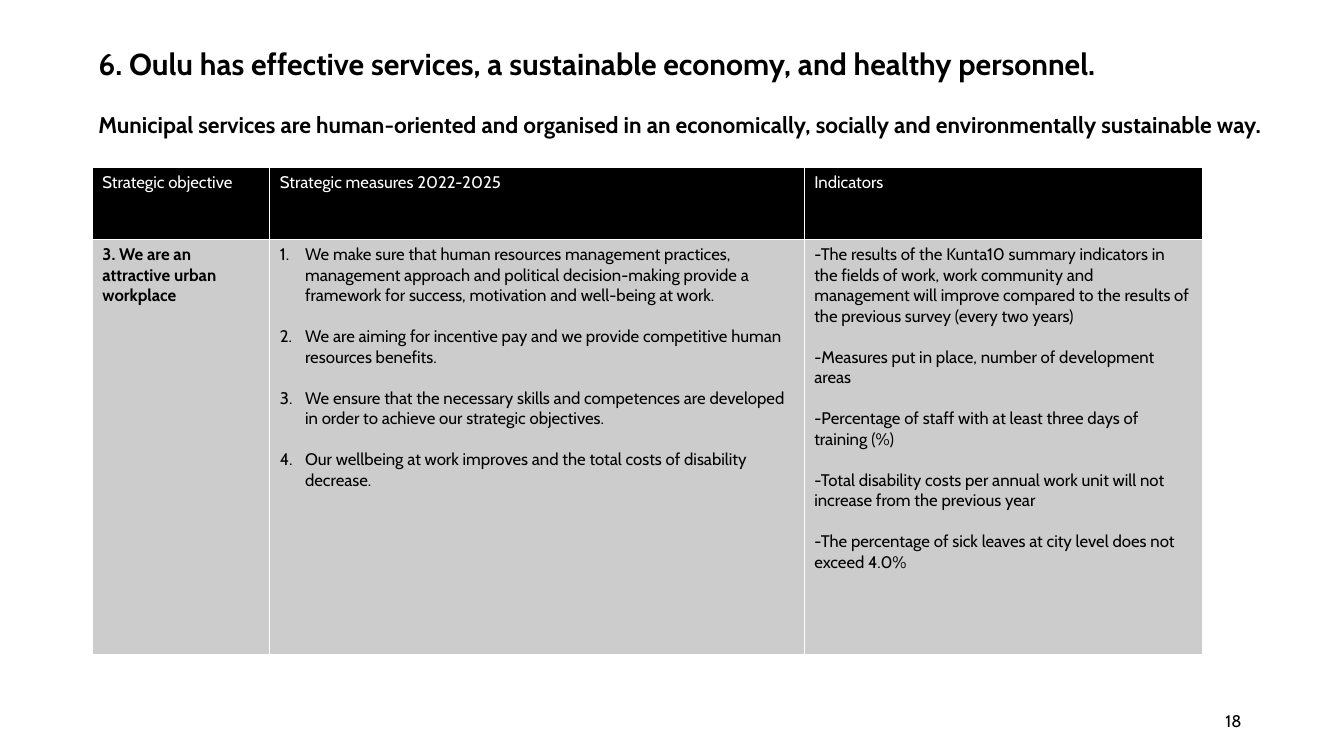
from lxml import etree
from pptx import Presentation
from pptx import util as u
from pptx.dml.color import RGBColor
from pptx.enum import text as t
from pptx.oxml import ns

PX = 9525  # EMU per px, 96 px to the inch
FONT = "Cabin"
BLACK = RGBColor(0, 0, 0)
WHITE = RGBColor(255, 255, 255)
GREY = RGBColor(0xCC, 0xCC, 0xCC)
LINE_GAP = 14.6  # one line of table text, in points

COLUMN_WIDTHS = [169, 509, 379]
ROW_HEIGHTS = [69, 395]
HEADERS = ["Strategic objective", "Strategic measures 2022-2025", "Indicators"]
OBJECTIVE = "3. We are an attractive urban workplace"
MEASURES = [
    "We make sure that human resources management practices, management approach and "
    "political decision-making provide a framework for success, motivation and "
    "well-being at work.",
    "We are aiming for incentive pay and we provide competitive human resources benefits.",
    "We ensure that the necessary skills and competences are developed in order to "
    "achieve our strategic objectives.",
    "Our wellbeing at work improves and the total costs of disability decrease.",
]
INDICATORS = [
    "-The results of the Kunta10 summary indicators in the fields of work, work community "
    "and management will improve compared to the results of the previous survey "
    "(every two years)",
    "-Measures put in place, number of development areas",
    "-Percentage of staff with at least three days of training (%)",
    "-Total disability costs per annual work unit will not increase from the previous year",
    "-The percentage of sick leaves at city level does not exceed 4.0%",
]


def px(*lengths):
    return [u.Emu(length * PX) for length in lengths]


def write(frame, content, size=12, color=BLACK, bold=False, align=t.PP_ALIGN.LEFT,
          gap=0, spacing=None, numbered=False, append=False):
    """Write one paragraph per text, with a gap between paragraphs."""
    for index, line in enumerate(content):
        first = index == 0 and not append
        paragraph = frame.paragraphs[0] if first else frame.add_paragraph()
        if numbered:
            properties = paragraph._p.get_or_add_pPr()
            properties.set("marL", str(24 * PX))
            properties.set("indent", str(-24 * PX))
            etree.SubElement(properties, ns.qn("a:buAutoNum"), type="arabicPeriod")
        paragraph.alignment = align
        paragraph.space_before = u.Pt(0 if first else gap)
        if spacing:
            paragraph.line_spacing = spacing
        run = paragraph.add_run()
        run.text = line
        run.font.name = FONT
        run.font.size = u.Pt(size)
        run.font.bold = bold
        run.font.color.rgb = color


def format_cell(cell, fill):
    properties = cell._tc.get_or_add_tcPr()
    for side in ("lnL", "lnR", "lnT", "lnB"):
        line = etree.SubElement(properties, ns.qn("a:" + side), w=str(u.Pt(1)))
        solid = etree.SubElement(line, ns.qn("a:solidFill"))
        etree.SubElement(solid, ns.qn("a:srgbClr"), val=str(WHITE))
    cell.fill.solid()
    cell.fill.fore_color.rgb = fill


def add_heading(slide, left, top, width, height):
    title = slide.shapes.title
    title.left, title.top, title.width, title.height = px(left, top, width, height)
    frame = title.text_frame
    frame.word_wrap = True
    frame.auto_size = t.MSO_AUTO_SIZE.NONE
    frame.vertical_anchor = t.MSO_ANCHOR.MIDDLE
    write(frame, ["6. Oulu has effective services, a sustainable economy, and healthy personnel."],
          size=21.6, bold=True, spacing=0.9)
    write(frame, ["Municipal services are human-oriented and organised in an economically, "
                  "socially and environmentally sustainable way."],
          size=16.2, bold=True, spacing=0.9, gap=23, append=True)


def add_strategy_table(slide, left, top):
    table = slide.shapes.add_table(
        len(ROW_HEIGHTS), len(COLUMN_WIDTHS),
        *px(left, top, sum(COLUMN_WIDTHS), sum(ROW_HEIGHTS))).table
    table.horz_banding = False
    for column, width in zip(table.columns, px(*COLUMN_WIDTHS)):
        column.width = width
    for row, height, fill in zip(table.rows, px(*ROW_HEIGHTS), (BLACK, GREY)):
        row.height = height
        for cell in row.cells:
            format_cell(cell, fill)

    # Header row
    for cell, header in zip(table.rows[0].cells, HEADERS):
        write(cell.text_frame, [header], color=WHITE)

    # Objective with its measures and indicators
    objective, measures, indicators = [cell.text_frame for cell in table.rows[1].cells]
    write(objective, [OBJECTIVE], bold=True)
    write(measures, MEASURES, gap=LINE_GAP, numbered=True)
    write(indicators, INDICATORS, gap=LINE_GAP)


def add_page_number(slide, number, left, top, width, height):
    frame = slide.shapes.add_textbox(*px(left, top, width, height)).text_frame
    frame.word_wrap = True
    frame.vertical_anchor = t.MSO_ANCHOR.MIDDLE
    write(frame, [number], align=t.PP_ALIGN.RIGHT)


def main():
    presentation = Presentation()
    presentation.slide_width, presentation.slide_height = px(1280, 720)
    slide = presentation.slides.add_slide(presentation.slide_layouts[5])
    add_heading(slide, 84, 49, 1135, 81)
    add_strategy_table(slide, 88, 159)
    add_page_number(slide, "18", 904, 667, 288, 38)
    presentation.save("out.pptx")


if __name__ == "__main__":
    main()
